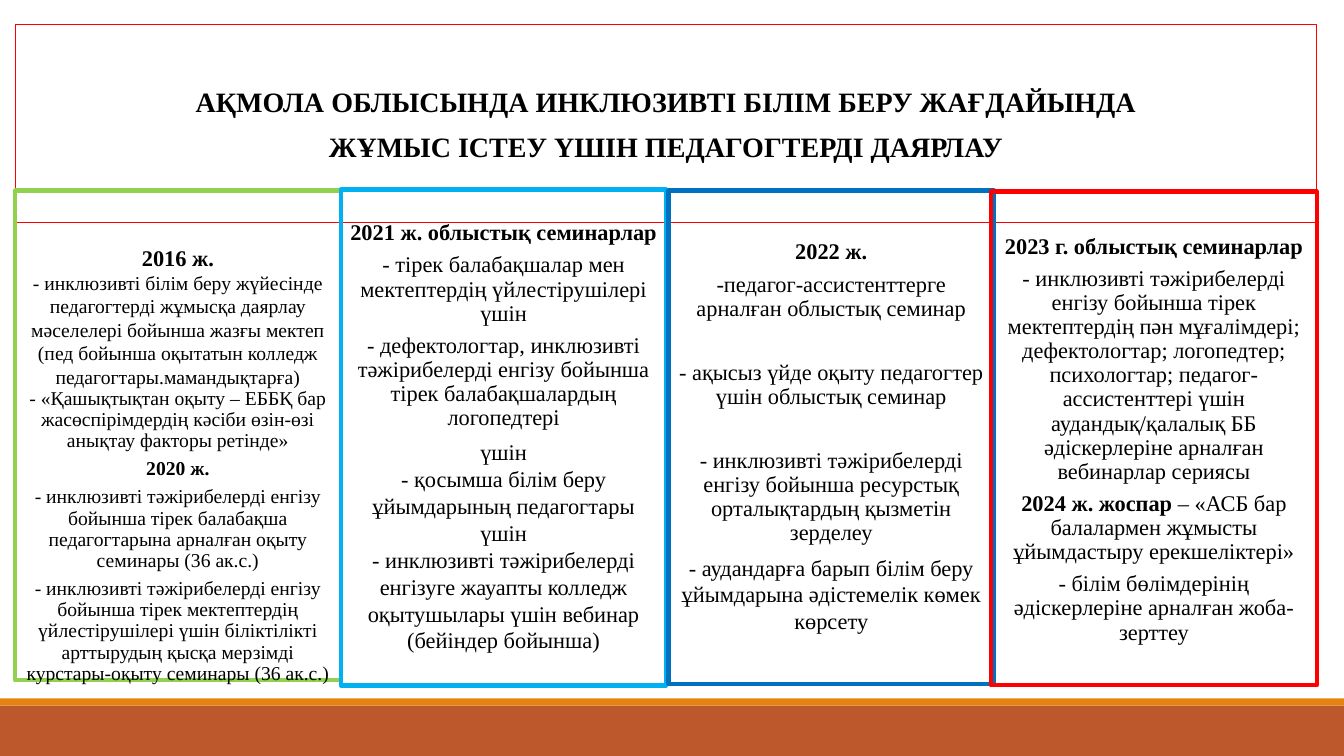
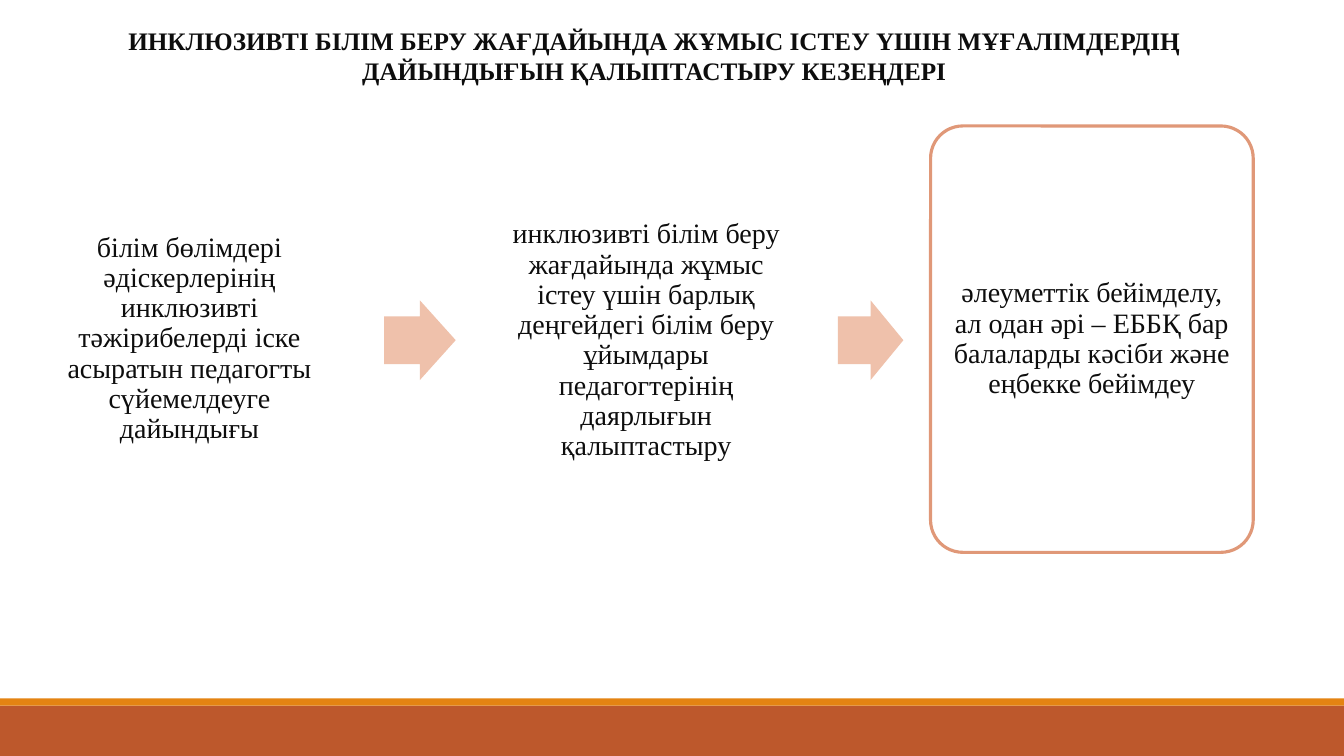
from pptx import Presentation
from pptx.dml.color import RGBColor
from pptx.enum.shapes import MSO_SHAPE as Shape
from pptx.enum.text import MSO_ANCHOR as Anchor, PP_ALIGN as Align
from pptx.util import Inches, Pt

FONT = "Times New Roman"
BLACK, INK, WHITE, RED = "000000", "0D0D0D", "FFFFFF", "FF0000"
ARROW, STAGE_LINE = "EFC1AB", "E09878"
WIDTH, HEIGHT = 13.33, 7.5
BANDS = [(7, 0.5, "BD582C"), (6.93, 0.07, "E48312")]
TIGHT, SINGLE = 0.9, 1.0
AFTER = 0.35
COLUMN_WIDTH, STAGE_WIDTH = 3.23, 3.2


def line(text, size=16, bold=False, spacing=TIGHT, after=AFTER):
    """Describe a paragraph of one run; after is a share of the size."""
    return {"runs": [(text, bold)], "size": size, "spacing": spacing, "after": after}


TRAINING_TITLE = [
    line("АҚМОЛА ОБЛЫСЫНДА ИНКЛЮЗИВТІ БІЛІМ БЕРУ ЖАҒДАЙЫНДА", 20, True, SINGLE, 0.4),
    line("ЖҰМЫС ІСТЕУ ҮШІН ПЕДАГОГТЕРДІ ДАЯРЛАУ", 20, True, SINGLE, 0.4),
]
STAGES_TITLE = [
    line("ИНКЛЮЗИВТІ БІЛІМ БЕРУ ЖАҒДАЙЫНДА ЖҰМЫС ІСТЕУ ҮШІН МҰҒАЛІМДЕРДІҢ "
         "ДАЙЫНДЫҒЫН ҚАЛЫПТАСТЫРУ КЕЗЕҢДЕРІ", 18, True, SINGLE, 0),
]
YEARS = [
    {"left": 0.15, "top": 1.89, "height": 4.86, "color": "92D050", "text_top": 0.53, "text": [
        line("2016 ж.", 16, True, SINGLE, 0),
        line("- инклюзивті білім беру жүйесінде педагогтерді жұмысқа даярлау мәселелері "
             "бойынша жазғы мектеп (пед бойынша оқытатын колледж "
             "педагогтары.мамандықтарға)", 14, False, SINGLE, 0),
        line("- «Қашықтықтан оқыту – ЕББҚ бар жасөспірімдердің кәсіби өзін-өзі анықтау "
             "факторы ретінде»", 14),
        line("2020 ж.", 14, True),
        line("- инклюзивті тәжірибелерді енгізу бойынша тірек балабақша педагогтарына "
             "арналған оқыту семинары (36 ак.с.)", 14),
        line("- инклюзивті тәжірибелерді енгізу бойынша тірек мектептердің үйлестірушілері "
             "үшін біліктілікті арттырудың қысқа мерзімді курстары-оқыту семинары "
             "(36 ак.с.)", 14),
    ]},
    {"left": 3.38, "top": 1.88, "height": 4.92, "color": "00B0F0", "text": [
        line("2021 ж. облыстық семинарлар", bold=True),
        line("- тірек балабақшалар мен мектептердің үйлестірушілері үшін"),
        line("- дефектологтар, инклюзивті тәжірибелерді енгізу бойынша тірек "
             "балабақшалардың логопедтері"),
        line("үшін", spacing=SINGLE, after=0),
        line("- қосымша білім беру ұйымдарының педагогтары үшін", spacing=SINGLE, after=0),
        line("- инклюзивті тәжірибелерді енгізуге жауапты колледж оқытушылары үшін вебинар "
             "(бейіндер бойынша)", spacing=SINGLE, after=0),
    ]},
    {"left": 6.63, "top": 1.89, "height": 4.9, "color": "0070C0", "text": [
        line("2022 ж.", bold=True),
        line("-педагог-ассистенттерге арналған облыстық семинар", after=1.78),
        line("- ақысыз үйде оқыту педагогтер үшін облыстық семинар", after=1.78),
        line("- инклюзивті тәжірибелерді енгізу бойынша ресурстық орталықтардың қызметін "
             "зерделеу"),
        line("- аудандарға барып білім беру ұйымдарына әдістемелік көмек көрсету",
             spacing=SINGLE, after=0),
    ]},
    {"left": 9.83, "top": 1.9, "height": 4.9, "color": RED, "text": [
        line("2023 г. облыстық семинарлар", bold=True, spacing=SINGLE),
        line("- инклюзивті тәжірибелерді енгізу бойынша тірек мектептердің пән мұғалімдері; "
             "дефектологтар; логопедтер; психологтар; педагог-ассистенттері үшін "
             "аудандық/қалалық ББ әдіскерлеріне арналған вебинарлар сериясы"),
        {"runs": [("2024 ж. жоспар ", True),
                  ("– «АСБ бар балалармен жұмысты ұйымдастыру ерекшеліктері»", False)],
         "size": 16, "spacing": TIGHT, "after": AFTER},
        line("- білім бөлімдерінің әдіскерлеріне арналған жоба-зерттеу"),
    ]},
]
STAGES = [
    (0.28, 1.2, 4.32, WHITE, 1.25,
     "білім бөлімдері әдіскерлерінің инклюзивті тәжірибелерді іске асыратын педагогты "
     "сүйемелдеуге дайындығы"),
    (4.81, 1.21, 4.34, WHITE, 1.25,
     "инклюзивті білім беру жағдайында жұмыс істеу үшін барлық деңгейдегі білім беру "
     "ұйымдары педагогтерінің даярлығын қалыптастыру"),
    (9.23, 1.25, 4.23, STAGE_LINE, 2.25,
     "әлеуметтік бейімделу, ал одан әрі – ЕББҚ бар балаларды кәсіби және еңбекке бейімдеу"),
]
ARROWS = [(3.81, 0.71), (8.31, 0.65)]


def rgb(value):
    """Turn a hex string into a colour."""
    return RGBColor.from_string(value)


def add_box(page, kind, place, fill=None, outline=None, weight=1):
    """Add a shape without shadow, with optional fill and outline."""
    box = page.shapes.add_shape(kind, *map(Inches, place))
    box.shadow.inherit = False
    if fill:
        box.fill.solid()
        box.fill.fore_color.rgb = rgb(fill)
    else:
        box.fill.background()
    if outline:
        box.line.color.rgb = rgb(outline)
        box.line.width = Pt(weight)
    else:
        box.line.fill.background()
    return box


def write(box, lines, color, inset=0.08, anchor=Anchor.MIDDLE):
    """Fill a box with centred paragraphs."""
    frame = box.text_frame
    frame.word_wrap = True
    frame.vertical_anchor = anchor
    frame.margin_left = frame.margin_right = Inches(inset)
    frame.margin_top = frame.margin_bottom = Inches(inset)
    for index, item in enumerate(lines):
        para = frame.add_paragraph() if index else frame.paragraphs[0]
        para.alignment = Align.CENTER
        para.line_spacing = item["spacing"]
        para.space_after = Pt(round(item["size"] * item["after"], 1))
        for text, bold in item["runs"]:
            span = para.add_run()
            span.text = text
            span.font.name = FONT
            span.font.size = Pt(item["size"])
            span.font.bold = bold
            span.font.color.rgb = rgb(color)


def add_page(deck):
    """Add a blank page with the bands at its foot."""
    page = deck.slides.add_slide(deck.slide_layouts[6])
    for top, height, color in BANDS:
        add_box(page, Shape.RECTANGLE, (0, top, WIDTH, height), color)
    return page


def build_training(deck):
    """Build the page of training by year."""
    page = add_page(deck)
    title = add_box(page, Shape.RECTANGLE, (0.15, 0.24, 12.91, 1.97), None, RED, 0.75)
    write(title, TRAINING_TITLE, BLACK)
    for year in YEARS:
        place = (year["left"], year["top"], COLUMN_WIDTH, year["height"])
        column = add_box(page, Shape.RECTANGLE, place, None, year["color"], 3)
        anchor = Anchor.TOP if "text_top" in year else Anchor.MIDDLE
        write(column, year["text"], BLACK, 0.07, anchor)
        column.text_frame.margin_top = Inches(year.get("text_top", 0.07))


def build_stages(deck):
    """Build the page of stages joined by arrows."""
    page = add_page(deck)
    for left, top, height, outline, weight, text in STAGES:
        place = (left, top, STAGE_WIDTH, height)
        stage = add_box(page, Shape.ROUNDED_RECTANGLE, place, WHITE, outline, weight)
        stage.adjustments[0] = 0.1
        write(stage, [line(text, 20)], INK)
    for left, width in ARROWS:
        arrow = add_box(page, Shape.RIGHT_ARROW, (left, 2.98, width, 0.79), ARROW)
        arrow.adjustments[0] = 0.6
        arrow.adjustments[1] = 0.5
    title = page.shapes.add_textbox(*map(Inches, (0.24, 0.2, 12.5, 0.71)))
    write(title, STAGES_TITLE, INK, 0.05, Anchor.TOP)
    title.text_frame.margin_left = title.text_frame.margin_right = Inches(0.1)


def main():
    """Build and save the deck."""
    deck = Presentation()
    deck.slide_width, deck.slide_height = Inches(WIDTH), Inches(HEIGHT)
    build_training(deck)
    build_stages(deck)
    deck.save("out.pptx")


if __name__ == "__main__":
    main()
